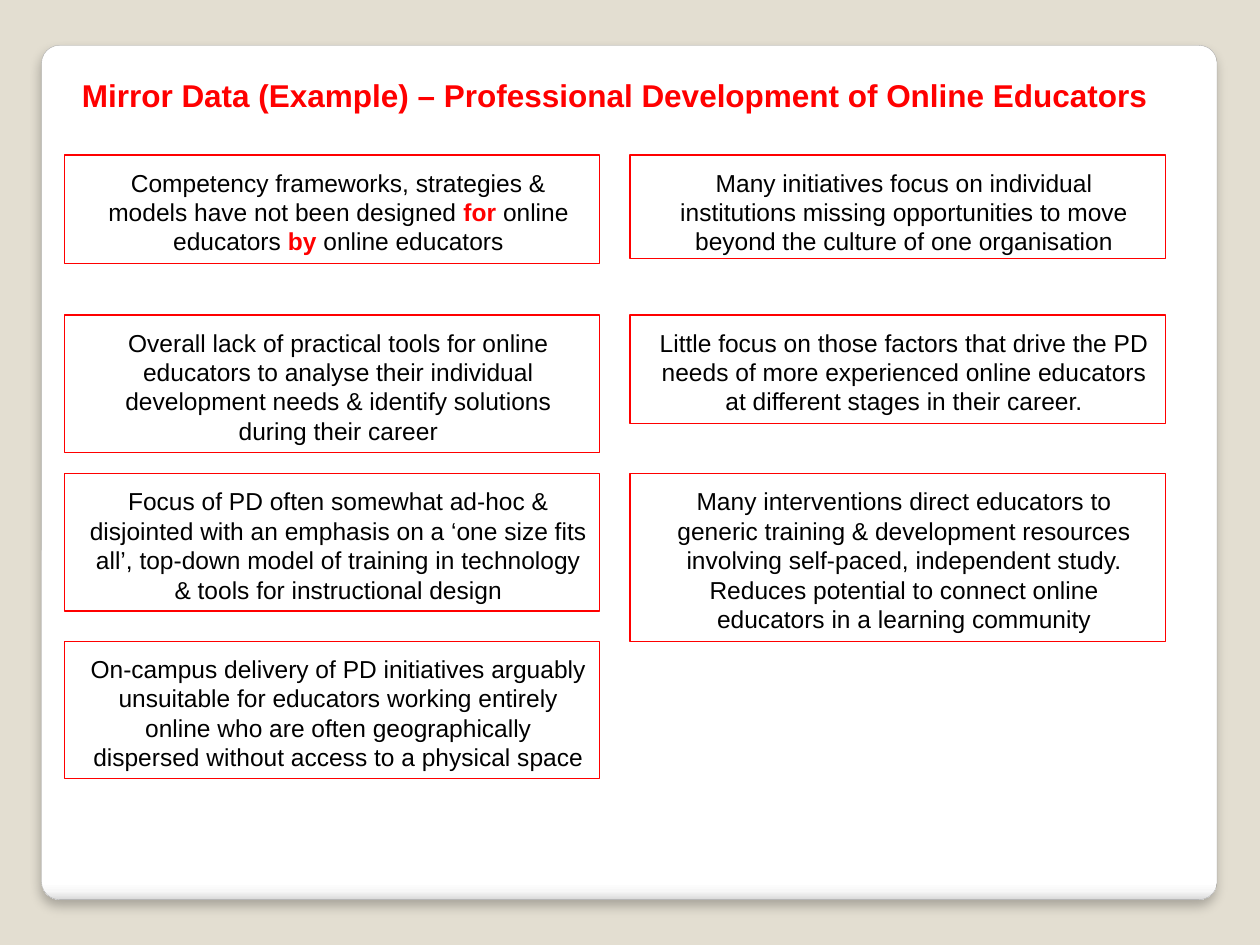
from lxml import etree
from pptx import Presentation
from pptx import util as u
from pptx.dml.color import RGBColor
from pptx.enum import shapes, text
from pptx.oxml import parse_xml
from pptx.oxml.ns import nsdecls, qn

BEIGE = RGBColor(0xE3, 0xDE, 0xD1)
GREY = RGBColor(0xA4, 0xA4, 0xA4)
RED = RGBColor(0xFF, 0x00, 0x00)
BLACK = RGBColor(0x00, 0x00, 0x00)

PANEL_STOPS = [(0, "FFFFFF"), (98, "FFFFFF"), (99, "F7F7F7"), (100, "DADADA")]
COLUMN_LEFTS = (0.51, 5)
ROW_TOPS = (1.23, 2.5, 3.76, 5.09)
BOX_WIDTH = 4.25

# Column, row, height, text; words between asterisks are emphasised.
FINDINGS = [
    (0, 0, 0.86, "Competency frameworks, strategies & models have not been designed* for *"
                 "online educators *by* online educators"),
    (1, 0, 0.82, "Many initiatives focus on individual institutions missing opportunities "
                 "to move beyond the culture of one organisation"),
    (0, 1, 1.09, "Overall lack of practical tools for online educators to analyse their "
                 "individual development needs & identify solutions during their career"),
    (1, 1, 0.86, "Little focus on those factors that drive the PD needs of more experienced "
                 "online educators at different stages in their career."),
    (0, 2, 1.09, "Focus of PD often somewhat ad-hoc & disjointed with an emphasis on a "
                 "‘one size fits all’, top-down model of training in technology & tools "
                 "for instructional design"),
    (1, 2, 1.33, "Many interventions direct educators to generic training & development "
                 "resources involving self-paced, independent study. Reduces potential to "
                 "connect online educators in a learning community"),
    (0, 3, 1.09, "On-campus delivery of PD initiatives arguably unsuitable for educators "
                 "working entirely online who are often geographically dispersed without "
                 "access to a physical space"),
]


class SlideBuilder:
    """Holds the text style and the slide being filled."""

    font_name = "Arial"
    body_size = 14
    title_size = 18

    def __init__(self, slide):
        self.slide = slide

    def background(self, color):
        fill = self.slide.background.fill
        fill.solid()
        fill.fore_color.rgb = color

    def format_run(self, run, size, color, bold):
        font = run.font
        font.name = self.font_name
        font.size = u.Pt(size)
        font.color.rgb = color
        font.bold = bold

    def panel(self, left, top, width, height):
        """Rounded panel with a shaded lower edge and a soft shadow."""
        shape = self.slide.shapes.add_shape(
            shapes.MSO_SHAPE.ROUNDED_RECTANGLE,
            u.Inches(left), u.Inches(top), u.Inches(width), u.Inches(height))
        shape.adjustments[0] = 0.021
        shape.line.color.rgb = GREY
        shape.line.width = u.Pt(0.16)
        shape.fill.gradient()
        shape.fill.gradient_angle = 270
        stops = shape.element.spPr.find(qn("a:gradFill")).find(qn("a:gsLst"))
        for stop in list(stops):
            stops.remove(stop)
        for percent, color in PANEL_STOPS:
            stop = etree.SubElement(stops, qn("a:gs"), pos=str(percent * 1000))
            etree.SubElement(stop, qn("a:srgbClr"), val=color)
        shape.element.spPr.append(parse_xml(
            f'<a:effectLst {nsdecls("a")}>'
            f'<a:outerShdw blurRad="{u.Pt(6)}" dist="{u.Pt(4)}" dir="5400000" '
            'algn="t" rotWithShape="0"><a:srgbClr val="000000">'
            '<a:alpha val="25000"/></a:srgbClr></a:outerShdw></a:effectLst>'))

    def title(self, left, top, width, height, words):
        shape = self.slide.shapes.add_textbox(
            u.Inches(left), u.Inches(top), u.Inches(width), u.Inches(height))
        frame = shape.text_frame
        frame.word_wrap = True
        frame.vertical_anchor = text.MSO_ANCHOR.BOTTOM
        frame.text = words
        paragraph = frame.paragraphs[0]
        paragraph.alignment = text.PP_ALIGN.CENTER
        paragraph.line_spacing = 1.2
        self.format_run(paragraph.runs[0], self.title_size, RED, True)

    def finding(self, left, top, width, height, words):
        """Red-framed box; every second part between asterisks is bold red."""
        shape = self.slide.shapes.add_shape(
            shapes.MSO_SHAPE.RECTANGLE,
            u.Inches(left), u.Inches(top), u.Inches(width), u.Inches(height))
        shape.shadow.inherit = False
        shape.fill.background()
        shape.line.color.rgb = RED
        shape.line.width = u.Pt(0.75)
        frame = shape.text_frame
        frame.word_wrap = True
        frame.vertical_anchor = text.MSO_ANCHOR.TOP
        frame.margin_left = u.Inches(0.2)
        frame.margin_top = frame.margin_right = u.Inches(0.1)
        frame.margin_bottom = u.Inches(0.05)
        paragraph = frame.paragraphs[0]
        paragraph.alignment = text.PP_ALIGN.CENTER
        paragraph.space_before = u.Pt(2.5)
        for index, part in enumerate(words.split("*")):
            run = paragraph.add_run()
            run.text = part
            emphasised = index % 2 == 1
            self.format_run(run, self.body_size, RED if emphasised else BLACK, emphasised)


def main():
    presentation = Presentation()
    presentation.slide_width = u.Inches(10)
    presentation.slide_height = u.Inches(7.5)
    slide = presentation.slides.add_slide(presentation.slide_layouts[6])
    builder = SlideBuilder(slide)
    builder.background(BEIGE)
    builder.panel(0.33, 0.36, 9.33, 6.78)
    for column, row, height, words in FINDINGS:
        builder.finding(COLUMN_LEFTS[column], ROW_TOPS[row], BOX_WIDTH, height, words)
    builder.title(-0.04, 0.29, 9.84, 0.66,
                  "Mirror Data (Example) – Professional Development of Online Educators")
    presentation.save("out.pptx")


if __name__ == "__main__":
    main()
